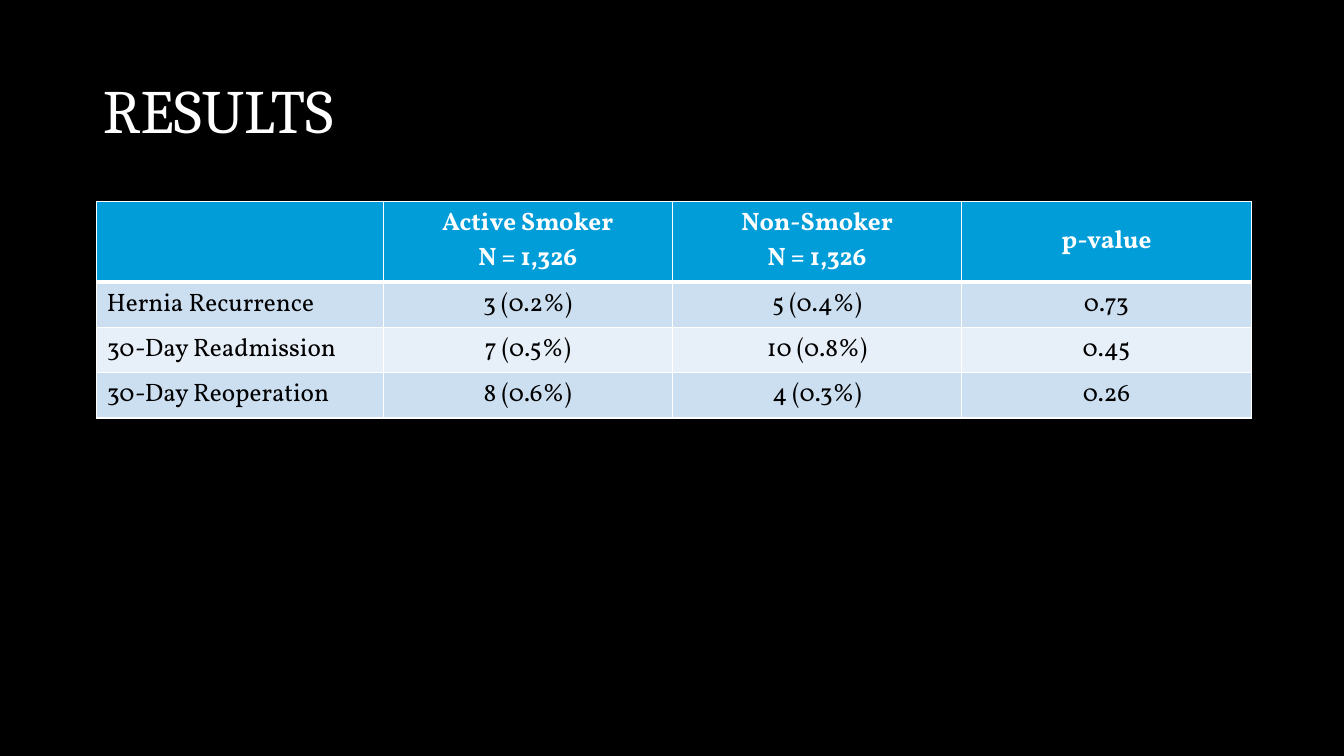
"""Build a results slide comparing hernia outcomes of smokers and non-smokers."""
from dataclasses import dataclass

from lxml import etree
from pptx import Presentation
from pptx.dml.color import RGBColor
from pptx.enum.text import MSO_ANCHOR, PP_ALIGN
from pptx.oxml.ns import qn
from pptx.util import Inches, Pt

MIDDLE, TOP = MSO_ANCHOR.MIDDLE, MSO_ANCHOR.TOP
LEFT, CENTER = PP_ALIGN.LEFT, PP_ALIGN.CENTER
TITLE_ONLY = 5


@dataclass(frozen=True)
class Theme:
    background: str = "000000"
    light: str = "FFFFFF"
    dark: str = "000000"
    header: str = "009DD9"
    bands: tuple = ("CCDFF1", "E7EFF8")
    title_font: str = "Cambria"
    table_font: str = "Vollkorn"
    title_size: int = 44
    table_size: int = 18
    thin: int = 1
    thick: int = 3


def style_runs(paragraph, font, size, color, bold=False):
    for run in paragraph.runs:
        run.font.name = font
        run.font.size = Pt(size)
        run.font.bold = bold
        run.font.color.rgb = RGBColor.from_string(color)


def add_border(cell, side, width, color):
    line = etree.SubElement(cell._tc.get_or_add_tcPr(), qn(f"a:ln{side}"), w=str(Pt(width)))
    fill = etree.SubElement(line, qn("a:solidFill"))
    etree.SubElement(fill, qn("a:srgbClr"), val=color)


theme = Theme()
outcomes = [
    ["", "Active Smoker\nN = 1,326", "Non-Smoker\nN = 1,326", "p-value"],
    ["Hernia Recurrence", "3 (0.2%)", "5 (0.4%)", "0.73"],
    ["30-Day Readmission", "7 (0.5%)", "10 (0.8%)", "0.45"],
    ["30-Day Reoperation", "8 (0.6%)", "4 (0.3%)", "0.26"],
]
column_widths = [2.84] + [2.87] * 3
row_heights = [0.79] + [0.45] * 3

deck = Presentation()
deck.slide_width, deck.slide_height = Inches(13.33), Inches(7.5)
slide = deck.slides.add_slide(deck.slide_layouts[TITLE_ONLY])
slide.background.fill.solid()
slide.background.fill.fore_color.rgb = RGBColor.from_string(theme.background)

title = slide.shapes.title
title.left, title.top = Inches(0.92), Inches(0.4)
title.width, title.height = Inches(11.5), Inches(1.45)
title.text_frame.text = "RESULTS"
title.text_frame.vertical_anchor = MIDDLE
heading = title.text_frame.paragraphs[0]
heading.alignment = LEFT
heading.line_spacing = 0.9
style_runs(heading, theme.title_font, theme.title_size, theme.light)

results = slide.shapes.add_table(
    len(row_heights), len(column_widths), Inches(0.96), Inches(2),
    Inches(sum(column_widths)), Inches(sum(row_heights))).table
for column, width in zip(results.columns, column_widths):
    column.width = Inches(width)
for row, height in zip(results.rows, row_heights):
    row.height = Inches(height)

for r, outcome in enumerate(outcomes):
    is_header = r == 0
    band = theme.header if is_header else theme.bands[(r - 1) % 2]
    ink = theme.light if is_header else theme.dark
    border_widths = {
        "L": theme.thin,
        "R": theme.thin,
        "T": theme.thick if r == 1 else theme.thin,
        "B": theme.thick if is_header else theme.thin,
    }
    for c, entry in enumerate(outcome):
        cell = results.cell(r, c)
        cell.text_frame.text = entry
        cell.vertical_anchor = MIDDLE if c else TOP
        for side, width in border_widths.items():
            add_border(cell, side, width, theme.light)
        cell.fill.solid()
        cell.fill.fore_color.rgb = RGBColor.from_string(band)
        for paragraph in cell.text_frame.paragraphs:
            paragraph.alignment = CENTER if c else LEFT
            style_runs(paragraph, theme.table_font, theme.table_size, ink, is_header)

deck.save("out.pptx")
